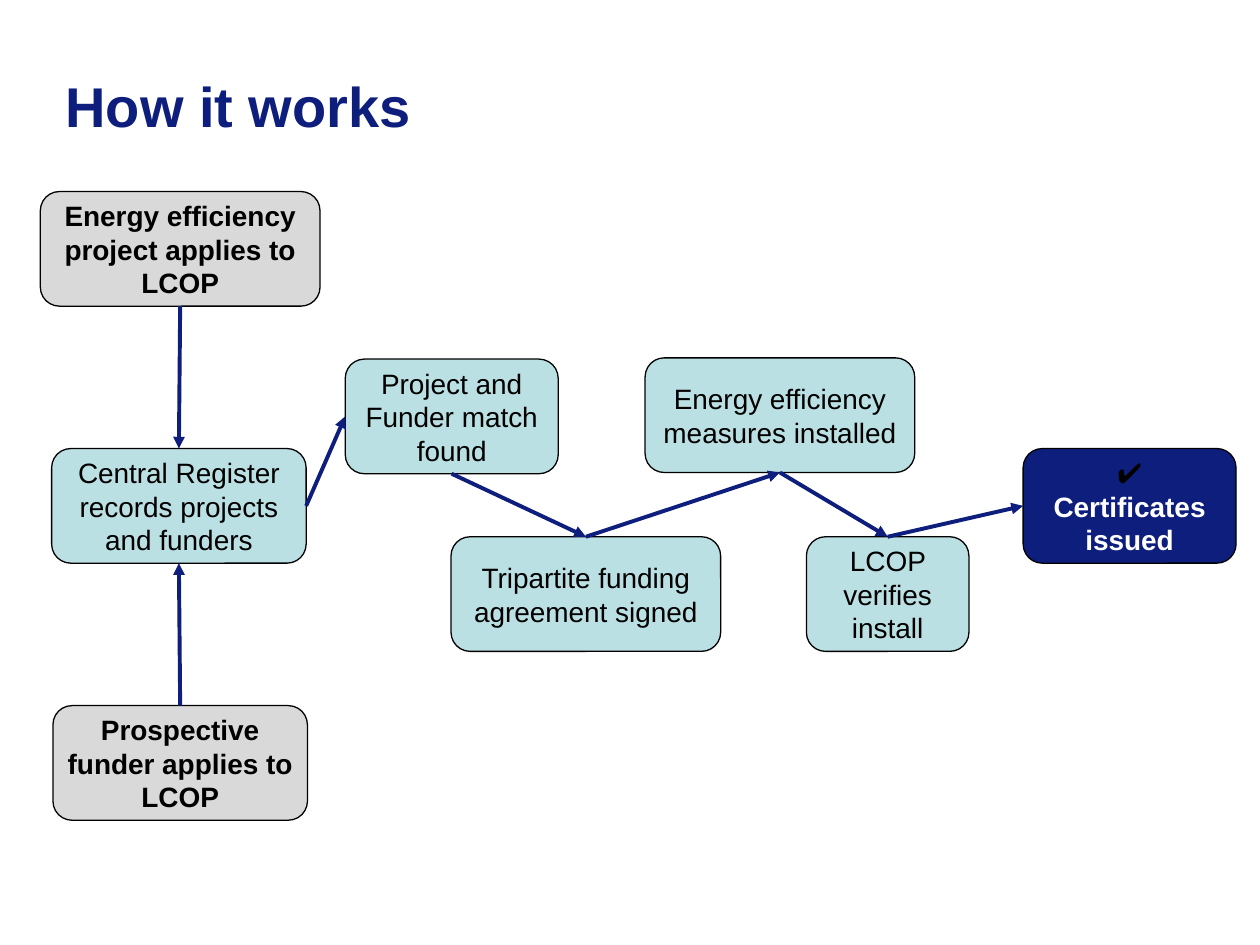
from lxml import etree
from pptx import Presentation
from pptx.dml.color import RGBColor
from pptx.enum import shapes, text
from pptx.oxml.ns import qn
from pptx.util import Inches, Pt

COLORS = {
    "navy": "0E1E7D",
    "grey": "D9D9D9",
    "teal": "BBE0E3",
    "black": "000000",
    "white": "FFFFFF",
}
STEP_HEIGHT = 0.91
TOP, LEFT, BOTTOM, RIGHT = range(4)

# name: (left, top, width, fill, text)
STEPS = {
    "project": (0.32, 1.52, 2.22, "grey", "Energy efficiency project applies to LCOP"),
    "funder": (0.42, 5.6, 2.02, "grey", "Prospective funder applies to LCOP"),
    "register": (0.41, 3.56, 2.02, "teal", "Central Register records projects and funders"),
    "match": (2.74, 2.85, 1.69, "teal", "Project and Funder match found"),
    "agreement": (3.58, 4.26, 2.14, "teal", "Tripartite funding agreement signed"),
    "measures": (5.12, 2.84, 2.14, "teal", "Energy efficiency measures installed"),
    "verify": (6.4, 4.26, 1.29, "teal", "LCOP verifies install"),
    "certificates": (8.12, 3.56, 1.69, "navy", "Certificates issued"),
}
ARROWS = [
    ("project", BOTTOM, "register", TOP),
    ("funder", TOP, "register", BOTTOM),
    ("register", RIGHT, "match", LEFT),
    ("match", BOTTOM, "agreement", TOP),
    ("agreement", TOP, "measures", BOTTOM),
    ("measures", BOTTOM, "verify", TOP),
    ("verify", TOP, "certificates", LEFT),
]


def rgb(name):
    return RGBColor.from_string(COLORS[name])


def add_run(paragraph, words, size, color, bold=False, font_name="Arial"):
    run = paragraph.add_run()
    run.text = words
    run.font.name = font_name
    run.font.size = Pt(size)
    run.font.bold = bold
    run.font.color.rgb = rgb(color)


def set_title(slide, words):
    title = slide.shapes.title
    title.left, title.top = Inches(0.42), Inches(0.5)
    title.width, title.height = Inches(7.17), Inches(0.67)
    frame = title.text_frame
    frame.vertical_anchor = text.MSO_ANCHOR.MIDDLE
    paragraph = frame.paragraphs[0]
    paragraph.alignment = text.PP_ALIGN.LEFT
    add_run(paragraph, words, 32, "navy", bold=True)


def add_step(slide, left, top, width, fill, words):
    shape = slide.shapes.add_shape(
        shapes.MSO_SHAPE.ROUNDED_RECTANGLE,
        Inches(left), Inches(top), Inches(width), Inches(STEP_HEIGHT))
    shape.shadow.inherit = False
    shape.fill.solid()
    shape.fill.fore_color.rgb = rgb(fill)
    shape.line.color.rgb = rgb("black")
    shape.line.width = Pt(0.75)
    frame = shape.text_frame
    frame.word_wrap = True
    frame.margin_left = frame.margin_right = Inches(0.05)
    frame.vertical_anchor = text.MSO_ANCHOR.MIDDLE
    paragraph = frame.paragraphs[0]
    paragraph.alignment = text.PP_ALIGN.CENTER
    final = fill == "navy"
    if final:
        add_run(paragraph, "✔️", 16, "black", font_name="Times New Roman")
        paragraph.add_line_break()
    add_run(paragraph, words, 16, "white" if final else "black", bold=fill != "teal")
    return shape


def add_arrow(slide, start, start_side, end, end_side):
    connector = slide.shapes.add_connector(shapes.MSO_CONNECTOR.STRAIGHT, 0, 0, 0, 0)
    connector.begin_connect(start, start_side)
    connector.end_connect(end, end_side)
    connector.line.color.rgb = rgb("navy")
    connector.line.width = Pt(2.25)
    etree.SubElement(connector.line._get_or_add_ln(), qn("a:tailEnd"), type="triangle")
    etree.SubElement(connector._element.spPr, qn("a:effectLst"))


def main():
    presentation = Presentation()
    presentation.slide_width, presentation.slide_height = Inches(10), Inches(7.5)
    slide = presentation.slides.add_slide(presentation.slide_layouts[5])
    set_title(slide, "How it works")
    steps = {name: add_step(slide, *step) for name, step in STEPS.items()}
    for start, start_side, end, end_side in ARROWS:
        add_arrow(slide, steps[start], start_side, steps[end], end_side)
    presentation.save("out.pptx")


if __name__ == "__main__":
    main()
